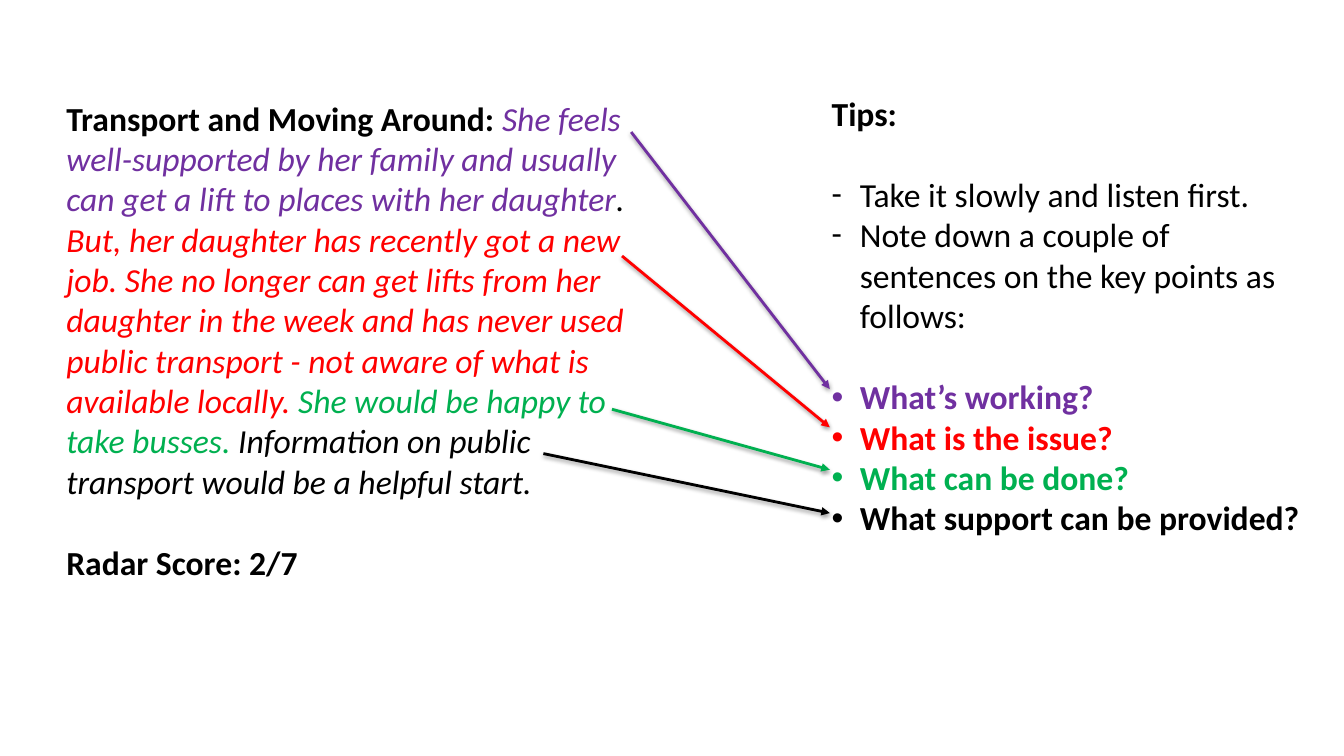
from lxml import etree
from pptx import Presentation
from pptx.dml.color import RGBColor
from pptx.enum.shapes import MSO_CONNECTOR
from pptx.enum.text import MSO_AUTO_SIZE
from pptx.oxml.ns import qn
from pptx.util import Inches, Pt

STRAIGHT = MSO_CONNECTOR.STRAIGHT
NO_AUTOFIT = MSO_AUTO_SIZE.NONE

BLACK = RGBColor(0x00, 0x00, 0x00)
PURPLE = RGBColor(0x70, 0x30, 0xA0)
RED = RGBColor(0xFF, 0x00, 0x00)
GREEN = RGBColor(0x00, 0xB0, 0x50)

FONT, SIZE = "Calibri", Pt(24)
LINE_GAP = Pt(29.3)
INDENT = Inches(0.28)
ARROW_END_X = 8.23

# Paragraph: (bullet, gap before, runs); run: (text, colour, style)
STORY = [
    (None, False, [
        ("Transport and Moving Around: ", BLACK, "bold"),
        ("She feels well-supported by her family and usually can get a lift "
         "to places with her daughter", PURPLE, "italic"),
        (". ", BLACK, "italic"),
        ("But, her daughter has recently got a new job. She no longer can get "
         "lifts from her daughter in the week and has never used public "
         "transport - not aware of what is available locally. ", RED, "italic"),
        ("She would be happy to take busses. ", GREEN, "italic"),
        ("Information on public transport would be a helpful start.",
         BLACK, "italic"),
    ]),
    (None, True, [("Radar Score: 2/7", BLACK, "bold")]),
]
TIPS = [
    (None, False, [("Tips:", BLACK, "bold")]),
    ("-", True, [("Take it slowly and listen first.", BLACK, "plain")]),
    ("-", False, [("Note down a couple of sentences on the key points as "
                   "follows:", BLACK, "plain")]),
    ("•", True, [("What’s working?", PURPLE, "bold")]),
    ("•", False, [("What is the issue?", RED, "bold")]),
    ("•", False, [("What can be done?", GREEN, "bold")]),
    ("•", False, [("What support can be provided?", BLACK, "bold")]),
]
# Start x, start y, end y, colour
ARROWS = [
    (6.26, 1.31, 3.86, PURPLE),
    (6.17, 2.54, 4.24, RED),
    (6.07, 4.06, 4.66, GREEN),
    (5.39, 4.50, 5.09, BLACK),
]


def add_bullet(p, char):
    pPr = p._p.get_or_add_pPr()
    pPr.set("marL", str(INDENT))
    pPr.set("indent", str(-INDENT))
    font = "Arial" if char == "•" else FONT
    etree.SubElement(pPr, qn("a:buFont")).set("typeface", font)
    etree.SubElement(pPr, qn("a:buChar")).set("char", char)


def add_text(slide, box, paragraphs):
    tf = slide.shapes.add_textbox(*map(Inches, box)).text_frame
    tf.word_wrap = True
    tf.auto_size = NO_AUTOFIT
    for i, (bullet, gap, runs) in enumerate(paragraphs):
        p = tf.add_paragraph() if i else tf.paragraphs[0]
        if bullet:
            add_bullet(p, bullet)
        if gap:
            p.space_before = LINE_GAP
        for text, color, style in runs:
            r = p.add_run()
            r.text = text
            r.font.name, r.font.size = FONT, SIZE
            r.font.color.rgb = color
            r.font.bold = style == "bold"
            r.font.italic = style == "italic"


def add_arrow(slide, x, y, end_y, color):
    """Draw an arrow with a soft shadow to the left edge of the tips."""
    line = slide.shapes.add_connector(
        STRAIGHT, *map(Inches, (x, y, ARROW_END_X, end_y)))
    line.line.color.rgb = color
    line.line.width = Pt(2)
    ln = line.line._get_or_add_ln()
    etree.SubElement(ln, qn("a:tailEnd")).set("type", "triangle")
    effects = etree.SubElement(line._element.spPr, qn("a:effectLst"))
    shadow = etree.SubElement(
        effects, qn("a:outerShdw"), blurRad=str(Pt(3.1)), dist=str(Pt(1.6)),
        dir="5400000", rotWithShape="0")
    tint = etree.SubElement(shadow, qn("a:srgbClr"), val=str(BLACK))
    etree.SubElement(tint, qn("a:alpha"), val="38000")


def main():
    prs = Presentation()
    prs.slide_width, prs.slide_height = Inches(13.33), Inches(7.5)
    slide = prs.slides.add_slide(prs.slide_layouts[6])
    add_text(slide, (8.15, 0.87, 4.94, 5.02), TIPS)
    add_text(slide, (0.56, 0.92, 5.93, 4.69), STORY)
    for arrow in ARROWS:
        add_arrow(slide, *arrow)
    prs.save("out.pptx")


if __name__ == "__main__":
    main()
